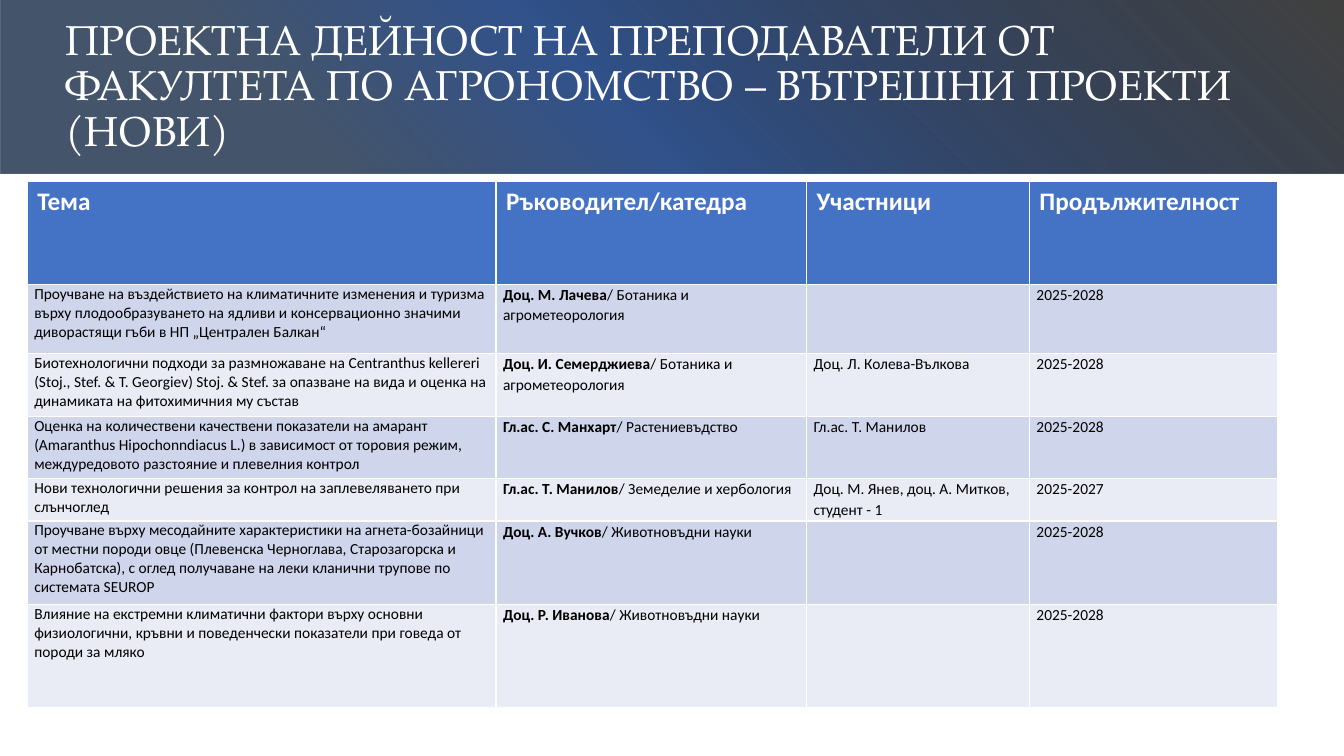
from lxml import etree
from pptx import Presentation
from pptx.dml.color import RGBColor
from pptx.enum.shapes import MSO_SHAPE
from pptx.enum.text import MSO_ANCHOR, MSO_AUTO_SIZE, PP_ALIGN
from pptx.oxml import parse_xml
from pptx.oxml.ns import nsdecls, qn
from pptx.util import Inches, Pt

RECT = MSO_SHAPE.RECTANGLE
MIDDLE, TOP = MSO_ANCHOR.MIDDLE, MSO_ANCHOR.TOP
LEFT = PP_ALIGN.LEFT
NO_FIT = MSO_AUTO_SIZE.NONE

WHITE = RGBColor(0xFF, 0xFF, 0xFF)
BLACK = RGBColor(0, 0, 0)
BLUE = RGBColor(0x44, 0x72, 0xC4)
DARK = RGBColor(0xCF, 0xD5, 0xEA)
LIGHT = RGBColor(0xE9, 0xEB, 0xF5)
SLATE = RGBColor(0x44, 0x54, 0x6A)
NAVY = RGBColor(0x31, 0x52, 0x8C)

WIDE, HIGH = Inches(13.33), Inches(7.5)
BAND = Inches(1.72)
STOPS = [(23, SLATE, 100), (45, NAVY, 100), (99, BLACK, 74)]
COLS = [4.65, 3.08, 2.21, 2.46]
ROWS = [1.02, 0.69, 0.62, 0.62, 0.42, 0.83, 1.02]

TITLE = ("ПРОЕКТНА ДЕЙНОСТ НА ПРЕПОДАВАТЕЛИ ОТ ФАКУЛТЕТА ПО АГРОНОМСТВО – "
         "ВЪТРЕШНИ ПРОЕКТИ (НОВИ)")
HEADS = ["Тема", "Ръководител/катедра", "Участници", "Продължителност"]
# Topic, leader, department, members, years
WORKS = [
    ("Проучване на въздействието на климатичните изменения и туризма върху "
     "плодообразуването на ядливи и консервационно значими диворастящи гъби "
     "в НП „Централен Балкан“",
     "Доц. М. Лачева", "Ботаника и агрометеорология", "", "2025-2028"),
    ("Биотехнологични подходи за размножаване на Centranthus kellereri "
     "(Stoj., Stef. & T. Georgiev) Stoj. & Stef. за опазване на вида и оценка "
     "на динамиката на фитохимичния му състав",
     "Доц. И. Семерджиева", "Ботаника и агрометеорология",
     "Доц. Л. Колева-Вълкова", "2025-2028"),
    ("Оценка на количествени качествени показатели на амарант (Amaranthus "
     "Hipochonndiacus L.) в зависимост от торовия режим, междуредовото "
     "разстояние и плевелния контрол",
     "Гл.ас. С. Манхарт", "Растениевъдство", "Гл.ас. Т. Манилов", "2025-2028"),
    ("Нови технологични решения за контрол на заплевеляването при слънчоглед",
     "Гл.ас. Т. Манилов", "Земеделие и хербология",
     "Доц. М. Янев, доц. А. Митков, студент - 1", "2025-2027"),
    ("Проучване върху месодайните характеристики на агнета-бозайници от местни "
     "породи овце (Плевенска Черноглава, Старозагорска и Карнобатска), с оглед "
     "получаване на леки кланични трупове по системата SEUROP",
     "Доц. А. Вучков", "Животновъдни науки", "", "2025-2028"),
    ("Влияние на екстремни климатични фактори върху основни физиологични, "
     "кръвни и поведенчески показатели при говеда от породи за мляко",
     "Доц. Р. Иванова", "Животновъдни науки", "", "2025-2028"),
]


def write(frame, *runs, size=11, font="Calibri", color=BLACK, space=1.0, after=0):
    """Fill the first paragraph with (text, bold) runs."""
    para = frame.paragraphs[0]
    para.alignment = LEFT
    para.line_spacing = space
    para.space_after = Pt(after)
    for text, bold in runs:
        run = para.add_run()
        run.text = text
        run.font.name, run.font.size = font, Pt(size)
        run.font.bold = bold
        run.font.color.rgb = color


def shade(shape, stops, angle):
    """Give the shape a linear gradient of (percent, colour, opacity) stops."""
    shape.fill.gradient()
    grad = shape.element.spPr.find(qn("a:gradFill"))
    old = grad.find(qn("a:gsLst"))
    new = parse_xml(f"<a:gsLst {nsdecls('a')}/>")
    for pos, color, alpha in stops:
        stop = etree.SubElement(new, qn("a:gs"), pos=str(pos * 1000))
        tint = etree.SubElement(stop, qn("a:srgbClr"), val=str(color))
        if alpha < 100:
            etree.SubElement(tint, qn("a:alpha"), val=str(alpha * 1000))
    grad.replace(old, new)
    grad.find(qn("a:lin")).set("ang", str(angle * 60000))


def add_band(slide):
    """Lay a turned gradient strip across the top, behind the title."""
    band = slide.shapes.add_shape(
        RECT, (WIDE - BAND) // 2, (BAND - WIDE) // 2, BAND, WIDE)
    band.rotation = 90
    band.shadow.inherit = False
    band.line.fill.background()
    shade(band, STOPS, 225)
    slide.shapes.title.element.addprevious(band.element)


def add_title(slide):
    title = slide.shapes.title
    title.left, title.top = Inches(0.55), Inches(0.14)
    title.width, title.height = Inches(12.44), Inches(1.45)
    frame = title.text_frame
    frame.word_wrap, frame.auto_size = True, NO_FIT
    frame.vertical_anchor = MIDDLE
    write(frame, (TITLE, False), size=30, font="TeX Gyre Pagella",
          color=WHITE, space=0.9)


def paint(cell, color):
    cell.fill.solid()
    cell.fill.fore_color.rgb = color
    cell.vertical_anchor = TOP


def add_row(cells, work, color):
    topic, head, unit, team, years = work
    parts = [[(topic, False)], [(head, True), (f"/ {unit}", False)],
             [(team, False)], [(years, False)]]
    for col, (cell, runs) in enumerate(zip(cells, parts)):
        paint(cell, color)
        if not runs[0][0]:
            continue
        cell.margin_left = cell.margin_right = Inches(0.07)
        cell.margin_top = cell.margin_bottom = 0
        loose = {"space": 1.07, "after": 8} if col else {}
        write(cell.text_frame, *runs, **loose)


def add_works(slide):
    table = slide.shapes.add_table(
        len(ROWS), len(COLS), Inches(0.27), Inches(1.8),
        Inches(sum(COLS)), Inches(sum(ROWS))).table
    for col, width in zip(table.columns, COLS):
        col.width = Inches(width)
    for row, height in zip(table.rows, ROWS):
        row.height = Inches(height)
    for cell, text in zip(table.rows[0].cells, HEADS):
        paint(cell, BLUE)
        write(cell.text_frame, (text, True), size=18, color=WHITE)
    for num, work in enumerate(WORKS):
        add_row(table.rows[num + 1].cells, work, LIGHT if num % 2 else DARK)


def main():
    deck = Presentation()
    deck.slide_width, deck.slide_height = WIDE, HIGH
    slide = deck.slides.add_slide(deck.slide_layouts[5])
    add_band(slide)
    add_title(slide)
    add_works(slide)
    deck.save("out.pptx")


if __name__ == "__main__":
    main()
